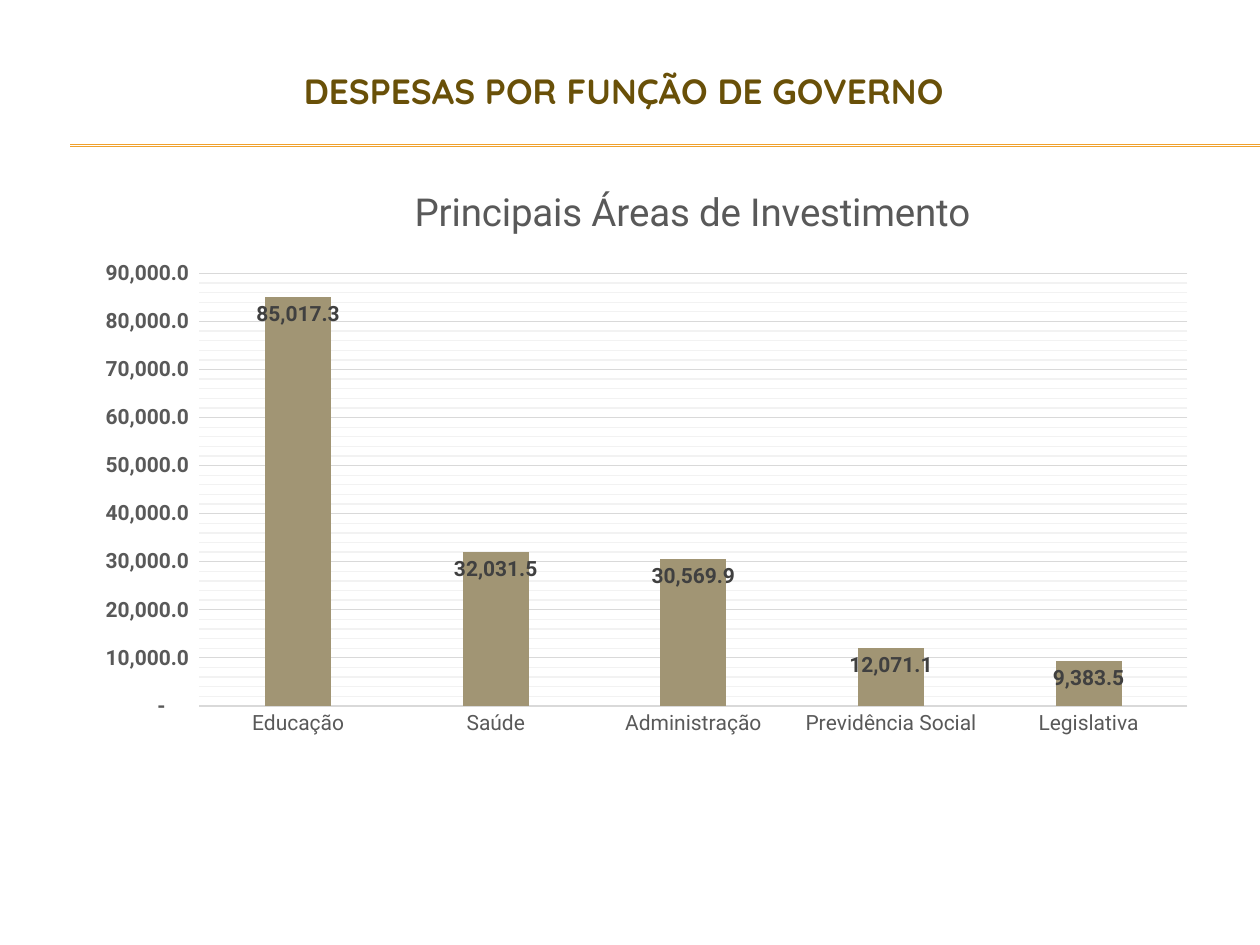
"""Builds a slide with government spending by area."""
import copy
import dataclasses

import lxml.etree
import pptx
import pptx.chart.data
import pptx.dml.color
import pptx.enum.chart
import pptx.enum.shapes
import pptx.enum.text
import pptx.oxml
import pptx.oxml.ns
import pptx.util

Cm, Pt = pptx.util.Cm, pptx.util.Pt
qn = pptx.oxml.ns.qn
NUMBER = r'_-* #,##0.0_-;\-* #,##0.0_-;_-* "-"??_-;'
AREAS = {
    "Educação": 85017.3,
    "Saúde": 32031.5,
    "Administração": 30569.9,
    "Previdência Social": 12071.1,
    "Legislativa": 9383.5,
}


@dataclasses.dataclass(frozen=True)
class Theme:
    """Colours, fonts and type sizes."""
    brown: str = "695008"
    gold: str = "F0A22E"
    bar: str = "A19574"
    text: str = "595959"
    label: str = "404040"
    grid: str = "D9D9D9"
    faint: str = "F2F2F2"
    head: str = "Quicksand"
    body: str = "Roboto"
    title: int = 20
    chart: int = 22
    small: int = 12


class Deck:
    """Holds the theme and the current slide."""

    def __init__(self, theme):
        self.theme = theme
        self.file = pptx.Presentation()
        self.file.slide_width, self.file.slide_height = Cm(25.4), Cm(19.05)
        self.slide = self.file.slides.add_slide(self.file.slide_layouts[5])

    def font(self, font, size, color, bold=False, name=None):
        """Style one font."""
        font.name = name or self.theme.body
        font.size, font.bold = Pt(size), bold
        font.color.rgb = pptx.dml.color.RGBColor.from_string(color)

    def stroke(self, line, color):
        """Style one thin line."""
        line.color.rgb = pptx.dml.color.RGBColor.from_string(color)
        line.width = Pt(0.75)

    def title(self, text, left, top, width, height):
        """Fill and place the title."""
        shape = self.slide.shapes.title
        shape.left, shape.top = Cm(left), Cm(top)
        shape.width, shape.height = Cm(width), Cm(height)
        frame = shape.text_frame
        frame.text = text
        frame.vertical_anchor = pptx.enum.text.MSO_ANCHOR.MIDDLE
        para = frame.paragraphs[0]
        para.alignment = pptx.enum.text.PP_ALIGN.CENTER
        self.font(para.runs[0].font, self.theme.title, self.theme.brown, True, self.theme.head)

    def rule(self, left, right, top):
        """Draw a horizontal line."""
        line = self.slide.shapes.add_connector(
            pptx.enum.shapes.MSO_CONNECTOR.STRAIGHT, Cm(left), Cm(top), Cm(right), Cm(top))
        self.stroke(line.line, self.theme.gold)
        lxml.etree.SubElement(line._element.spPr, qn("a:effectLst"))

    def layout(self, parent, index, **parts):
        """Place a chart part by fractions of the chart."""
        for old in parent.findall(qn("c:layout")):
            parent.remove(old)
        layout = pptx.oxml.parse_xml(
            f'<c:layout {pptx.oxml.ns.nsdecls("c")}><c:manualLayout/></c:layout>')
        for tag, value in parts.items():
            lxml.etree.SubElement(layout[0], qn(f"c:{tag}")).set("val", str(value))
        parent.insert(index, layout)

    def columns(self, title, data, left, top, width, height):
        """Add a column chart."""
        theme, kinds = self.theme, pptx.enum.chart
        source = pptx.chart.data.CategoryChartData()
        source.categories = list(data)
        source.add_series("Series 1", list(data.values()))
        chart = self.slide.shapes.add_chart(
            kinds.XL_CHART_TYPE.COLUMN_CLUSTERED,
            Cm(left), Cm(top), Cm(width), Cm(height), source).chart
        self.font(chart.font, theme.small, theme.text)
        chart.has_legend = False
        chart.has_title = True
        frame = chart.chart_title.text_frame
        frame.text = title
        self.font(frame.paragraphs[0].runs[0].font, theme.chart, theme.text)
        self.layout(chart.chart_title._element, 1, xMode="edge", yMode="edge", x=0.33, y=0.03)
        self.layout(chart._chartSpace.chart.plotArea, 0, layoutTarget="inner",
                    xMode="edge", yMode="edge", x=0.155, y=0.144, w=0.83, h=0.525)
        self.axes(chart)
        plot = chart.plots[0]
        plot.gap_width, plot.vary_by_categories = 199, False
        fill = plot.series[0].format.fill
        fill.solid()
        fill.fore_color.rgb = pptx.dml.color.RGBColor.from_string(theme.bar)
        labels = plot.series[0].data_labels
        labels.show_value = True
        labels.position = kinds.XL_LABEL_POSITION.INSIDE_END
        labels.number_format, labels.number_format_is_linked = NUMBER, False
        self.font(labels.font, theme.small, theme.label, True)

    def axes(self, chart):
        """Style both axes and the grid."""
        theme, none = self.theme, pptx.enum.chart.XL_TICK_MARK.NONE
        areas, scale = chart.category_axis, chart.value_axis
        for axis in (areas, scale):
            axis.major_tick_mark = axis.minor_tick_mark = none
            self.font(axis.tick_labels.font, theme.small, theme.text, axis is scale)
        self.stroke(areas.format.line, theme.grid)
        scale.format.line.fill.background()
        scale.minimum_scale, scale.maximum_scale = 0, 90000
        scale.major_unit, scale.minor_unit = 10000, 2000
        scale.has_major_gridlines = scale.has_minor_gridlines = True
        self.stroke(scale.major_gridlines.format.line, theme.grid)
        major, minor = (scale._element.find(qn(f"c:{kind}Gridlines")) for kind in ("major", "minor"))
        minor.append(copy.deepcopy(major.find(qn("c:spPr"))))
        next(minor.iter(qn("a:srgbClr"))).set("val", theme.faint)
        ticks = scale.tick_labels
        ticks.number_format, ticks.number_format_is_linked = NUMBER, False


def main():
    """Build and save the slide."""
    deck = Deck(Theme())
    for top in (2.92, 2.95):
        deck.rule(1.42, 25.4, top)
    deck.title("DESPESAS POR FUNÇÃO DE GOVERNO", 1.78, 1.4, 21.59, 0.84)
    deck.columns("Principais Áreas de Investimento", AREAS, 0.3, 3.12, 24, 16.61)
    deck.file.save("out.pptx")


if __name__ == "__main__":
    main()
